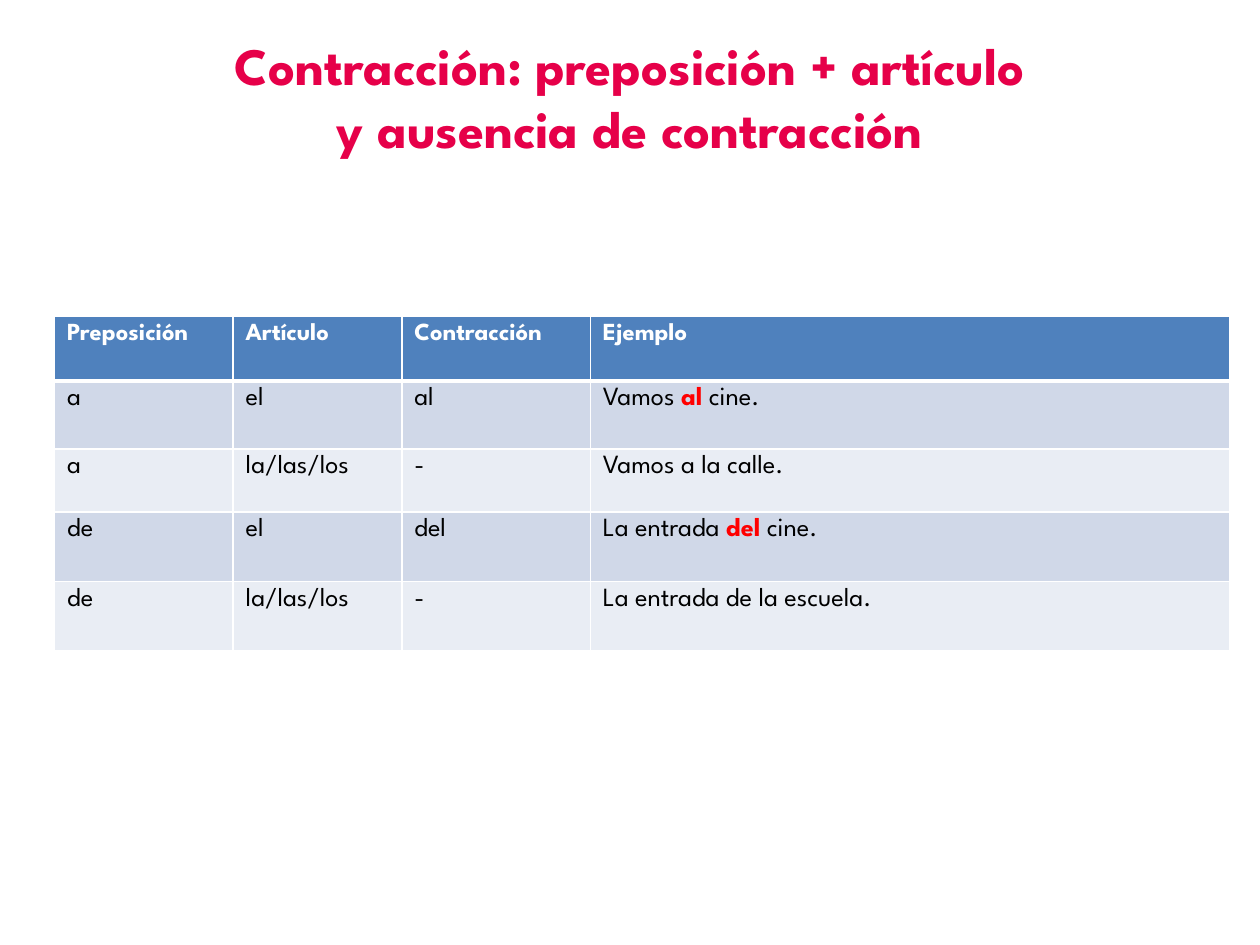
from pptx import Presentation
from pptx.dml.color import RGBColor
from pptx.enum.text import MSO_ANCHOR, PP_ALIGN
from pptx.oxml.ns import qn
from pptx.util import Cm, Pt
from lxml.etree import SubElement

# Content: a cell is a string, or a list of runs with the contraction in a tuple
TITLE = ["Contracción: preposición + artículo", "y ausencia de contracción"]
ROWS = [
    ["Preposición", "Artículo", "Contracción", "Ejemplo"],
    ["a", "el", "al", ["Vamos ", ("al",), " cine."]],
    ["a", "la/las/los", "-", "Vamos a la calle."],
    ["de", "el", "del", ["La entrada ", ("del",), " cine."]],
    ["de", "la/las/los", "-", "La entrada de la escuela."],
]
COL_WIDTHS = [3.6, 3.4, 3.8, 12.9]
ROW_HEIGHTS = [1.3, 1.37, 1.27, 1.4, 1.4]

# Formats
FONT = "League Spartan"
TITLE_TEXT = {"size": Pt(30), "bold": True, "color": "E60049"}
HEAD_TEXT = {"size": Pt(14), "bold": True, "color": "FFFFFF"}
BODY_TEXT = {"size": Pt(15), "bold": False, "color": "000000"}
KEY_TEXT = {"size": Pt(15), "bold": True, "color": "FF0000"}
HEAD_FILL, BANDS, BORDER = "4F81BD", ["D0D8E8", "E9EDF4"], "FFFFFF"


def rgb(value):
    return RGBColor.from_string(value)


def add_run(p, text, style):
    r = p.add_run()
    r.text = text
    r.font.name = FONT
    for name, value in style.items():
        if name == "color":
            r.font.color.rgb = rgb(value)
        else:
            setattr(r.font, name, value)


def set_borders(cell, widths):
    tc_pr = cell._tc.get_or_add_tcPr()
    for side, width in widths.items():
        ln = SubElement(tc_pr, qn(f"a:ln{side}"), w=str(Pt(width)))
        fill = SubElement(ln, qn("a:solidFill"))
        SubElement(fill, qn("a:srgbClr"), val=BORDER)


prs = Presentation()
prs.slide_width, prs.slide_height = Cm(25.4), Cm(19.05)
s = prs.slides.add_slide(prs.slide_layouts[5])

# Title
title = s.shapes.title
title.left, title.top, title.width, title.height = Cm(0), Cm(0.53), Cm(25.4), Cm(2.82)
tf = title.text_frame
tf.vertical_anchor = MSO_ANCHOR.TOP
for i, line in enumerate(TITLE):
    p = tf.add_paragraph() if i else tf.paragraphs[0]
    p.alignment = PP_ALIGN.CENTER
    add_run(p, line, TITLE_TEXT)

# Table
table = s.shapes.add_table(len(ROWS), len(COL_WIDTHS), Cm(1.1), Cm(6.38),
                           Cm(sum(COL_WIDTHS)), Cm(sum(ROW_HEIGHTS))).table
for col, width in zip(table.columns, COL_WIDTHS):
    col.width = Cm(width)
for i, (row, height) in enumerate(zip(ROWS, ROW_HEIGHTS)):
    table.rows[i].height = Cm(height)
    style = BODY_TEXT if i else HEAD_TEXT
    for j, content in enumerate(row):
        cell = table.cell(i, j)
        # The rule under the header is thicker
        set_borders(cell, {"L": 1, "R": 1, "T": 3 if i == 1 else 1, "B": 1 if i else 3})
        cell.fill.solid()
        cell.fill.fore_color.rgb = rgb(BANDS[(i - 1) % 2] if i else HEAD_FILL)
        p = cell.text_frame.paragraphs[0]
        for part in [content] if isinstance(content, str) else content:
            if isinstance(part, tuple):
                add_run(p, part[0], KEY_TEXT)
            else:
                add_run(p, part, style)

prs.save("out.pptx")
